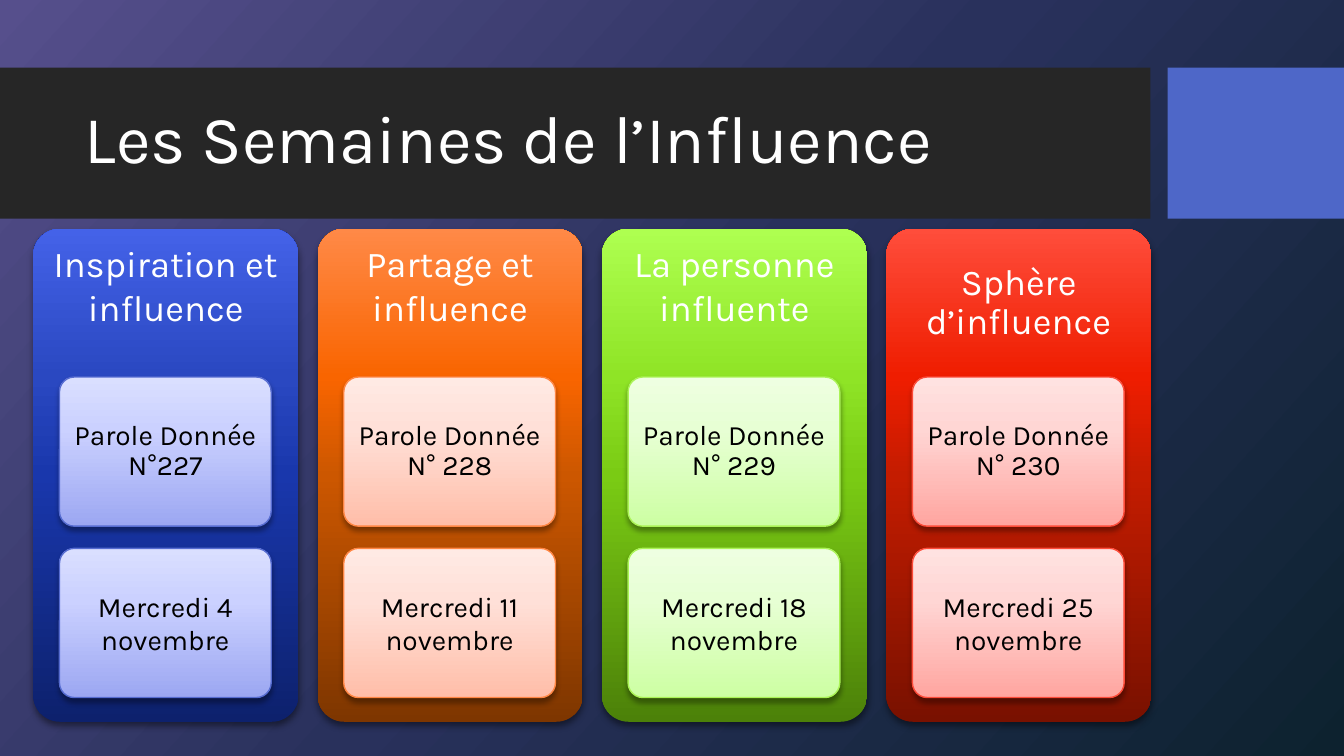
from lxml import etree
from pptx import Presentation
from pptx import util as u
from pptx.dml.color import RGBColor
from pptx.enum import shapes, text
from pptx.oxml.ns import qn

WHITE = RGBColor(0xFF, 0xFF, 0xFF)
BLACK = RGBColor(0x00, 0x00, 0x00)
CHARCOAL = RGBColor(0x26, 0x26, 0x26)
ACCENT = RGBColor(0x4E, 0x67, 0xC8)
BACKDROP = [RGBColor(0x56, 0x4F, 0x8C), RGBColor(0x29, 0x31, 0x5C), RGBColor(0x0D, 0x22, 0x2F)]
BLUE = [RGBColor(0x0D, 0x21, 0x6D), RGBColor(0x19, 0x37, 0xAC), RGBColor(0x2A, 0x48, 0xC1), RGBColor(0x44, 0x62, 0xE8)]
ORANGE = [RGBColor(0x7E, 0x36, 0x00), RGBColor(0xCC, 0x57, 0x00), RGBColor(0xF9, 0x65, 0x00), RGBColor(0xFF, 0x89, 0x47)]
GREEN = [RGBColor(0x4C, 0x81, 0x09), RGBColor(0x7A, 0xCB, 0x14), RGBColor(0x8F, 0xE4, 0x26), RGBColor(0xAE, 0xFF, 0x50)]
RED = [RGBColor(0x79, 0x11, 0x00), RGBColor(0xC4, 0x1C, 0x00), RGBColor(0xEF, 0x1D, 0x00), RGBColor(0xFF, 0x4D, 0x3B)]
PALE_BLUE = [RGBColor(0x9C, 0xA7, 0xF2), RGBColor(0xCB, 0xD1, 0xFF), RGBColor(0xDA, 0xDF, 0xFF)]
PALE_ORANGE = [RGBColor(0xFF, 0xBE, 0xA9), RGBColor(0xFF, 0xE0, 0xD8), RGBColor(0xFF, 0xEA, 0xE4)]
PALE_GREEN = [RGBColor(0xCD, 0xFF, 0xA3), RGBColor(0xE7, 0xFF, 0xD4), RGBColor(0xEE, 0xFF, 0xE1)]
PALE_RED = [RGBColor(0xFF, 0xA5, 0xA0), RGBColor(0xFF, 0xD6, 0xD4), RGBColor(0xFF, 0xE2, 0xE1)]
BLUE_EDGE = RGBColor(0x56, 0x6C, 0xD1)
ORANGE_EDGE = RGBColor(0xFF, 0x86, 0x43)
GREEN_EDGE = RGBColor(0xAA, 0xF3, 0x56)
RED_EDGE = RGBColor(0xFD, 0x4B, 0x39)


def set_gradient(owner, fill, positions, colors, angle):
    fill.gradient()
    grad = owner.find('.//' + qn('a:gradFill'))
    stops = grad.find(qn('a:gsLst'))
    for stop in list(stops):
        stops.remove(stop)
    for pos, color in zip(positions, colors):
        stop = etree.SubElement(stops, qn('a:gs'), pos=str(pos * 1000))
        etree.SubElement(stop, qn('a:srgbClr'), val=str(color))
    grad.find(qn('a:lin')).set('ang', str(angle * 60000))


def add_panel(box, positions, colors, shadow, label, size, color, spacing, insets):
    sp = s.shapes.add_shape(shapes.MSO_SHAPE.ROUNDED_RECTANGLE, *map(u.Inches, box))
    sp.adjustments[0] = 0.1
    set_gradient(sp._element, sp.fill, positions, colors, 270)
    sp.line.fill.background()
    sp.shadow.inherit = False
    blur, alpha = shadow
    outer = etree.SubElement(sp._element.spPr.find(qn('a:effectLst')), qn('a:outerShdw'),
                             blurRad=str(u.Pt(blur)), dist=str(u.Pt(3)), dir='5400000', rotWithShape='0')
    black = etree.SubElement(outer, qn('a:srgbClr'), val=str(BLACK))
    etree.SubElement(black, qn('a:alpha'), val=str(alpha * 1000))
    tf = sp.text_frame
    tf.word_wrap = True
    tf.vertical_anchor = text.MSO_ANCHOR.MIDDLE
    for side, inset in zip(('left', 'top', 'right', 'bottom'), insets):
        setattr(tf, 'margin_' + side, u.Inches(inset))
    p = tf.paragraphs[0]
    p.alignment = text.PP_ALIGN.CENTER
    p.line_spacing = spacing
    r = p.add_run()
    r.text = label
    for key, value in {'name': 'Karla', 'size': u.Pt(size)}.items():
        setattr(r.font, key, value)
    r.font.color.rgb = color
    return sp


prs = Presentation()
prs.slide_width, prs.slide_height = u.Inches(13.33), u.Inches(7.5)
s = prs.slides.add_slide(prs.slide_layouts[5])
set_gradient(s._element, s.background.fill, (0, 50, 100), BACKDROP, 42)

title = s.shapes.title
for left, width, color in ((0, 11.41, CHARCOAL), (11.58, 1.75, ACCENT)):
    band = s.shapes.add_shape(shapes.MSO_SHAPE.RECTANGLE, *map(u.Inches, (left, 0.67, width, 1.5)))
    band.fill.solid()
    band.fill.fore_color.rgb = color
    band.line.fill.background()
    band.shadow.inherit = False
    title._element.addprevious(band._element)

for key, value in {'left': 0.74, 'top': 0.82, 'width': 10.51, 'height': 1.18}.items():
    setattr(title, key, u.Inches(value))
tf = title.text_frame
tf.vertical_anchor = text.MSO_ANCHOR.MIDDLE
tf.word_wrap = True
p = tf.paragraphs[0]
p.alignment = text.PP_ALIGN.LEFT
p.line_spacing = 0.9
r = p.add_run()
r.text = 'Les Semaines de l’Influence'
for key, value in {'name': 'Karla', 'size': u.Pt(48)}.items():
    setattr(r.font, key, value)
r.font.color.rgb = WHITE

weeks = [
    ('Inspiration et influence', 1, 3.8, 'N°227', 4, BLUE, PALE_BLUE, BLUE_EDGE),
    ('Partage et influence', 1, 3.8, 'N° 228', 11, ORANGE, PALE_ORANGE, ORANGE_EDGE),
    ('La personne influente', 1, 3.8, 'N° 229', 18, GREEN, PALE_GREEN, GREEN_EDGE),
    ('Sphère d’influence', 0.9, 3.45, 'N° 230', 25, RED, PALE_RED, RED_EDGE),
]
for i, (theme, spacing, below, number, day, dark, pale, edge) in enumerate(weeks):
    left = 0.33 + 2.82 * i
    add_panel((left, 2.27, 2.63, 4.89), (0, 50, 70, 100), dark, (5, 45),
              theme, 26, WHITE, spacing, (0.03, 0.03, 0.03, below))
    cards = ((f'Parole Donnée {number}', 0.9), (f'Mercredi {day} novembre', 1))
    for row, (label, card_spacing) in enumerate(cards):
        card = add_panel((left + 0.26, 3.74 + 1.7 * row, 2.1, 1.48), (0, 65, 100), pale, (4, 35),
                         label, 20, BLACK, card_spacing, (0.06, 0.04, 0.06, 0.04))
        card.line.color.rgb = edge
        card.line.width = u.Pt(1)

prs.save("out.pptx")
